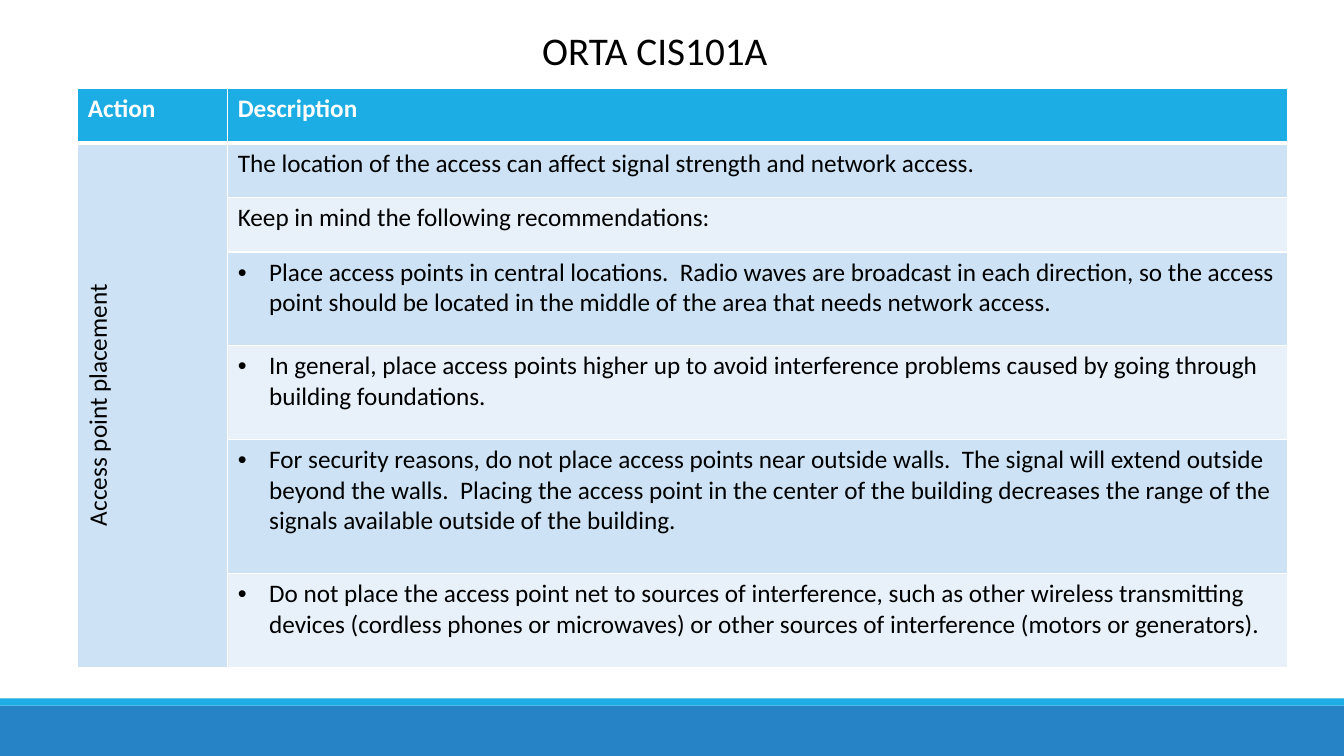
import pptx
import pptx.dml.color
import pptx.enum.shapes
import pptx.enum.text
import pptx.oxml
import pptx.oxml.ns
import pptx.util

Cm = pptx.util.Cm
Pt = pptx.util.Pt
RGB = pptx.dml.color.RGBColor
ALIGN = pptx.enum.text.PP_ALIGN
ANCHOR = pptx.enum.text.MSO_ANCHOR

WHITE = RGB(0xFF, 0xFF, 0xFF)
BLACK = RGB(0x00, 0x00, 0x00)
BLUE = RGB(0x26, 0x83, 0xC6)
CYAN = RGB(0x1C, 0xAD, 0xE4)
DARK = RGB(0xCD, 0xE3, 0xF5)
LIGHT = RGB(0xE8, 0xF1, 0xFA)
FONT = "Calibri"

WIDE, HIGH = 33.87, 19.05
COLS = [3.78, 26.7]
HEADS = ["Action", "Description"]
TOPIC = "Access point placement"
ROWS = [
    (1.37, False, "The location of the access can affect signal strength and network access."),
    (1.37, False, "Keep in mind the following recommendations:"),
    (2.36, True, "Place access points in central locations.  Radio waves are broadcast in each "
     "direction, so the access point should be located in the middle of the area that needs "
     "network access."),
    (2.36, True, "In general, place access points higher up to avoid interference problems "
     "caused by going through building foundations."),
    (3.38, True, "For security reasons, do not place access points near outside walls.  The "
     "signal will extend outside beyond the walls.  Placing the access point in the center of "
     "the building decreases the range of the signals available outside of the building."),
    (2.36, True, "Do not place the access point net to sources of interference, such as other "
     "wireless transmitting devices (cordless phones or microwaves) or other sources of "
     "interference (motors or generators)."),
]


def write(para, text, size, color, bold=False):
    """Add one formatted run to a paragraph."""
    run = para.add_run()
    run.text = text
    font = run.font
    font.name, font.size, font.bold = FONT, Pt(size), bold
    font.color.rgb = color


def edge(cell, sides):
    """Draw white borders on a cell, given point widths by side."""
    props = cell._tc.get_or_add_tcPr()
    for side, width in sides.items():
        props.append(pptx.oxml.parse_xml(
            f'<a:ln{side} {pptx.oxml.ns.nsdecls("a")} w="{Pt(width)}"><a:solidFill>'
            f'<a:srgbClr val="{WHITE}"/></a:solidFill></a:ln{side}>'))


def paint(cell, color):
    """Fill a cell with one colour."""
    cell.fill.solid()
    cell.fill.fore_color.rgb = color


def bullet(para):
    """Give a paragraph a hanging round bullet."""
    props = para._p.get_or_add_pPr()
    props.set("marL", str(Cm(0.79)))
    props.set("indent", str(-Cm(0.79)))
    for mark in ('<a:buFont {} typeface="Arial"/>', '<a:buChar {} char="•"/>'):
        props.append(pptx.oxml.parse_xml(mark.format(pptx.oxml.ns.nsdecls("a"))))


def band(slide, left, top, width, height, color):
    """Draw one plain footer band in the given box."""
    kind = pptx.enum.shapes.MSO_SHAPE.RECTANGLE
    bar = slide.shapes.add_shape(kind, Cm(left), Cm(top), Cm(width), Cm(height))
    bar.shadow.inherit = False
    bar.fill.solid()
    bar.fill.fore_color.rgb = color
    bar.line.fill.background()


def footer(slide, left, top, width, height):
    """Stack a thin cyan band on a blue one."""
    thin = 0.18
    band(slide, left, top + thin, width, height - thin, BLUE)
    band(slide, left, top, width, thin, CYAN)


def title(slide, left, top, width, height):
    """Place the slide title in the given box."""
    head = slide.shapes.title
    head.left, head.top, head.width, head.height = map(Cm, (left, top, width, height))
    frame = head.text_frame
    frame.word_wrap = False
    frame.vertical_anchor = ANCHOR.TOP
    para = frame.paragraphs[0]
    para.alignment = ALIGN.CENTER
    write(para, "ORTA CIS101A", 28, BLACK)


def advice(slide, left, top, width, height):
    """Build the table of access point advice in the given box."""
    count = len(ROWS) + 1
    frame = slide.shapes.add_table(count, 2, Cm(left), Cm(top), Cm(width), Cm(height))
    table = frame.table
    for col, size in zip(table.columns, COLS):
        col.width = Cm(size)
    table.rows[0].height = Cm(1.37)

    for cell, text in zip(table.rows[0].cells, HEADS):
        edge(cell, {"L": 1, "R": 1, "T": 1, "B": 3})
        paint(cell, CYAN)
        write(cell.text_frame.paragraphs[0], text, 18, WHITE, True)

    for num, (size, listed, text) in enumerate(ROWS, 1):
        table.rows[num].height = Cm(size)
        for cell in table.rows[num].cells:
            edge(cell, {"L": 1, "R": 1, "T": 3 if num == 1 else 1, "B": 1})
        paint(table.cell(num, 0), DARK)
        cell = table.cell(num, 1)
        paint(cell, DARK if num % 2 else LIGHT)
        para = cell.text_frame.paragraphs[0]
        if listed:
            bullet(para)
        write(para, text, 18, BLACK)

    side = table.cell(1, 0)
    side.merge(table.cell(count - 1, 0))
    side.vertical_anchor = ANCHOR.MIDDLE
    side._tc.get_or_add_tcPr().set("vert", "vert270")
    para = side.text_frame.paragraphs[0]
    para.alignment = ALIGN.CENTER
    write(para, TOPIC, 18, BLACK)


def main():
    """Build the slide and save it."""
    deck = pptx.Presentation()
    deck.slide_width, deck.slide_height = Cm(WIDE), Cm(HIGH)
    slide = deck.slides.add_slide(deck.slide_layouts[5])
    footer(slide, 0, 17.6, WIDE, HIGH - 17.6)
    title(slide, 13.26, 0.53, 6.48, 1.45)
    advice(slide, 1.96, 2.24, sum(COLS), 14.57)
    deck.save("out.pptx")


if __name__ == "__main__":
    main()
